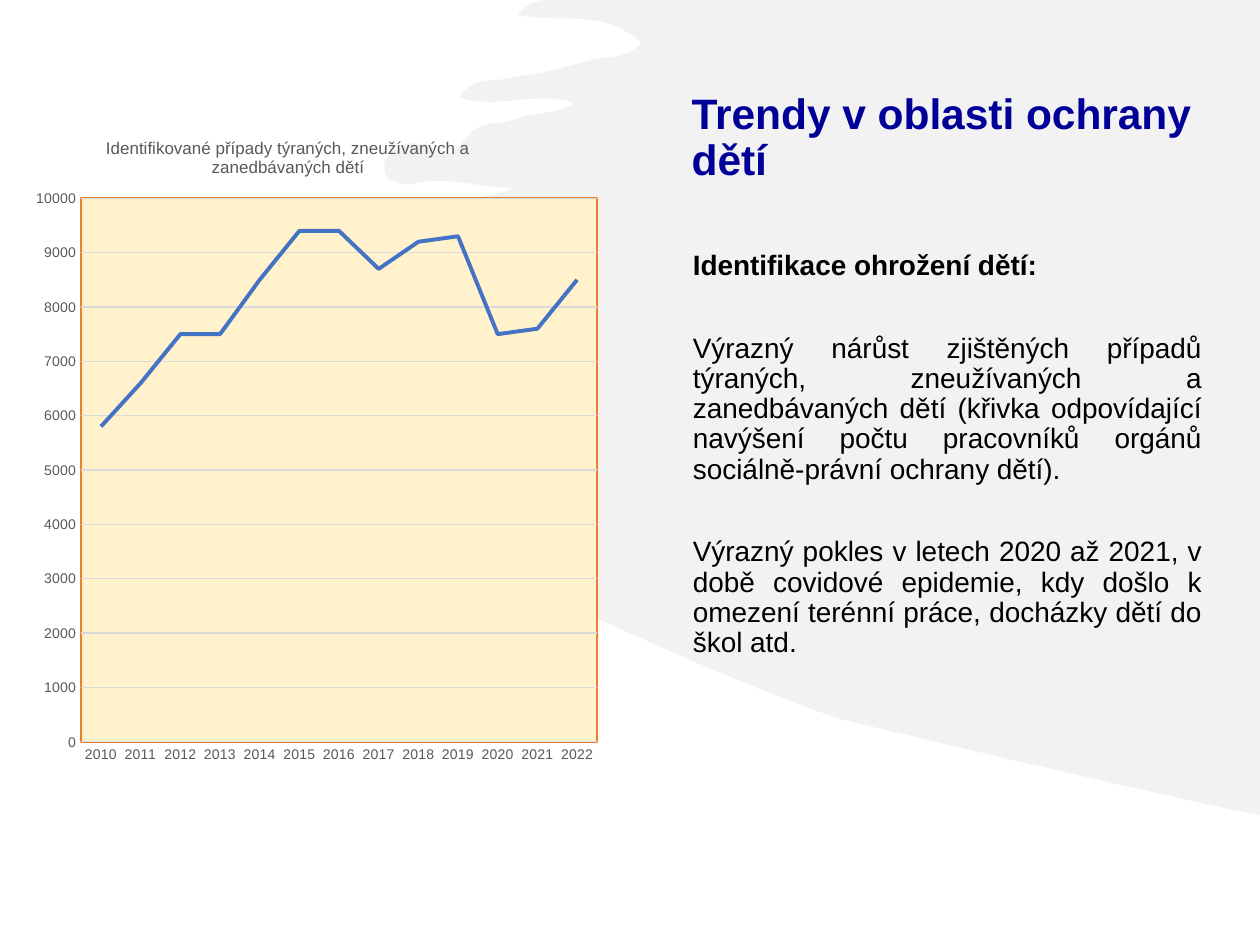
from lxml.etree import SubElement
from pptx import Presentation
from pptx.chart.data import CategoryChartData
from pptx.dml.color import RGBColor
from pptx.enum.chart import XL_CHART_TYPE, XL_TICK_MARK
from pptx.enum.text import MSO_ANCHOR, MSO_AUTO_SIZE, PP_ALIGN
from pptx.oxml import parse_xml
from pptx.oxml.ns import nsdecls, qn
from pptx.util import Pt

COLORS = {
    "title": "000099", "body": "000000", "label": "595959", "grid": "D9D9D9",
    "line": "4472C4", "plot": "FFF2CC", "border": "ED7D31", "splash": "E7E6E6",
}
FONT = "Arial"
TITLE = "Trendy v oblasti ochrany dětí"
BODY = [
    ("Identifikace ohrožení dětí:", True),
    ("Výrazný nárůst zjištěných případů týraných, zneužívaných a zanedbávaných dětí "
     "(křivka odpovídající navýšení počtu pracovníků orgánů sociálně-právní ochrany dětí).", False),
    ("Výrazný pokles v letech 2020 až 2021, v době covidové epidemie, "
     "kdy došlo k omezení terénní práce, docházky dětí do škol atd.", False),
]
CHART_TITLE = "Identifikované případy týraných, zneužívaných a zanedbávaných dětí"
YEARS = [str(year) for year in range(2010, 2023)]
CASES = [5800, 6600, 7500, 7500, 8500, 9400, 9400, 8700, 9200, 9300, 7500, 7600, 8500]

# Outline of the splash in units of 0.72 pt; each row of SPLASH_CURVES is
# two control points and an end point of a Bezier curve.
UNIT = 0.72
SPLASH_CORNERS = [(1000, 647), (1000, 0), (432, 0)]
SPLASH_CURVES = [
    (425, 1, 418, 3, 411, 12), (446, 19, 479, 6, 509, 34),
    (498, 47, 486, 44, 474, 47), (462, 49, 450, 53, 438, 56),
    (425, 59, 412, 60, 399, 63), (388, 65, 377, 61, 364, 77),
    (396, 88, 425, 71, 456, 82), (438, 92, 422, 89, 408, 95),
    (395, 100, 380, 94, 369, 111), (360, 124, 352, 126, 341, 118),
    (331, 111, 321, 113, 312, 120), (308, 123, 305, 126, 305, 132),
    (305, 141, 309, 143, 314, 144), (318, 146, 323, 147, 328, 146),
    (355, 139, 383, 150, 410, 149), (323, 176, 235, 167, 145, 176),
    (157, 195, 172, 179, 181, 193), (172, 222, 176, 237, 193, 239),
    (210, 241, 228, 231, 237, 265), (240, 276, 256, 273, 266, 275),
    (288, 279, 311, 275, 331, 288), (340, 293, 345, 297, 341, 311),
    (337, 325, 342, 330, 349, 336), (354, 340, 362, 339, 367, 352),
    (321, 350, 277, 340, 232, 350), (281, 374, 335, 373, 384, 402),
    (382, 412, 371, 407, 370, 422), (396, 438, 427, 427, 454, 450),
    (438, 461, 424, 444, 409, 454), (414, 469, 630, 561, 669, 571),
    (733, 587, 896, 625, 989, 645),
]


def rgb(name):
    return RGBColor.from_string(COLORS[name])


def set_font(font, size, color, bold=False):
    for key, value in {"name": FONT, "size": Pt(size), "bold": bold}.items():
        setattr(font, key, value)
    font.color.rgb = rgb(color)


def place(sp, left, top, width, height):
    for key, value in zip(("left", "top", "width", "height"), (left, top, width, height)):
        setattr(sp, key, Pt(value))


def bend_lines(sp, first):
    """Turn the line segments from the given one on, three by three, into curves."""
    segments = sp._element.findall(".//" + qn("a:lnTo"))[first:]
    for i in range(0, len(segments), 3):
        curve, *others = segments[i:i + 3]
        curve.tag = qn("a:cubicBezTo")
        for other in others:
            curve.append(other[0])
            other.getparent().remove(other)


def add_splash(s):
    knots = [curve[i:i + 2] for curve in SPLASH_CURVES for i in (0, 2, 4)]
    points = [(Pt(x * UNIT), Pt(y * UNIT)) for x, y in SPLASH_CORNERS + knots]
    builder = s.shapes.build_freeform(*points[0])
    builder.add_line_segments(points[1:], close=True)
    sp = builder.convert_to_shape()
    bend_lines(sp, len(SPLASH_CORNERS) - 1)
    sp.shadow.inherit = False
    sp.fill.solid()
    sp.fill.fore_color.rgb = rgb("splash")
    color = sp._element.spPr.find(".//" + qn("a:srgbClr"))
    SubElement(color, qn("a:alpha"), val="50000")
    sp.line.fill.background()
    s.shapes._spTree.insert(2, sp._element)  # behind the placeholders


def fill_title(sp):
    place(sp, 388, 29, 306, 111)
    tf = sp.text_frame
    formats = {"vertical_anchor": MSO_ANCHOR.BOTTOM, "auto_size": MSO_AUTO_SIZE.NONE,
               "margin_bottom": Pt(34.5), "word_wrap": True}
    for key, value in formats.items():
        setattr(tf, key, value)
    p = tf.paragraphs[0]
    p.alignment, p.line_spacing = PP_ALIGN.LEFT, 0.9
    r = p.add_run()
    r.text = TITLE
    set_font(r.font, 24.3, "title", True)


def fill_body(sp):
    place(sp, 388, 140, 306, 312)
    tf = sp.text_frame
    tf.auto_size = MSO_AUTO_SIZE.NONE
    formats = {"alignment": PP_ALIGN.JUSTIFY, "line_spacing": 0.9,
               "space_before": Pt(6), "space_after": Pt(24)}
    for i, (text, bold) in enumerate(BODY):
        p = tf.add_paragraph() if i else tf.paragraphs[0]
        for key, value in formats.items():
            setattr(p, key, value)
        pPr = p._p.get_or_add_pPr()
        pPr.set("marL", str(Pt(0.7)))
        pPr.set("indent", "0")
        SubElement(pPr, qn("a:buNone"))
        r = p.add_run()
        r.text = text
        set_font(r.font, 16, "body", bold)


def set_layout(element, index, inner=False, **fractions):
    """Fix the place of a chart part, in fractions of the chart."""
    for old in element.findall(qn("c:layout")):
        element.remove(old)
    layout = parse_xml(f"<c:layout {nsdecls('c')}><c:manualLayout/></c:layout>")
    values = {"layoutTarget": "inner"} if inner else {}
    values.update(xMode="edge", yMode="edge", **fractions)
    for tag, value in values.items():
        SubElement(layout[0], qn("c:" + tag), val=str(value))
    element.insert(index, layout)


def format_axis(axis):
    axis.major_tick_mark = axis.minor_tick_mark = XL_TICK_MARK.NONE
    set_font(axis.tick_labels.font, 8, "label")


def color_line(line, color, width):
    line.color.rgb = rgb(color)
    line.width = Pt(width)


def fill_plot_area(plot_area):
    plot_area.append(parse_xml(
        f"<c:spPr {nsdecls('c', 'a')}>"
        f"<a:solidFill><a:srgbClr val='{COLORS['plot']}'/></a:solidFill>"
        f"<a:ln w='{Pt(1)}'><a:solidFill><a:srgbClr val='{COLORS['border']}'/></a:solidFill></a:ln>"
        "</c:spPr>"))


def add_cases_chart(s):
    data = CategoryChartData()
    data.categories = YEARS
    data.add_series("Series 1", CASES)
    chart = s.shapes.add_chart(XL_CHART_TYPE.LINE, Pt(14.4), Pt(60.5),
                               Pt(333.4), Pt(383), data).chart
    set_font(chart.font, 8, "body")
    chart.has_legend = False

    p = chart.chart_title.text_frame.paragraphs[0]
    r = p.add_run()
    r.text = CHART_TITLE
    set_font(r.font, 9.7, "label")
    set_layout(chart.chart_title._element, 1, x=0.133, y=0.041)

    category, value = chart.category_axis, chart.value_axis
    for axis in (category, value):
        format_axis(axis)
    color_line(category.format.line, "grid", 0.75)
    value.format.line.fill.background()
    value.minimum_scale, value.maximum_scale, value.major_unit = 0, 10000, 1000
    color_line(value.major_gridlines.format.line, "grid", 0.75)

    chart.plots[0].vary_by_categories = False
    series = chart.plots[0].series[0]
    series.smooth = False
    color_line(series.format.line, "line", 2.25)

    plot_area = chart._chartSpace.find(".//" + qn("c:plotArea"))
    set_layout(plot_area, 0, inner=True, x=0.096, y=0.138, w=0.884, h=0.811)
    fill_plot_area(plot_area)


def main():
    prs = Presentation()
    prs.slide_width, prs.slide_height = Pt(720), Pt(540)
    s = prs.slides.add_slide(prs.slide_layouts[1])
    fill_title(s.shapes.title)
    fill_body(s.placeholders[1])
    add_splash(s)
    add_cases_chart(s)
    prs.save("out.pptx")


if __name__ == "__main__":
    main()
